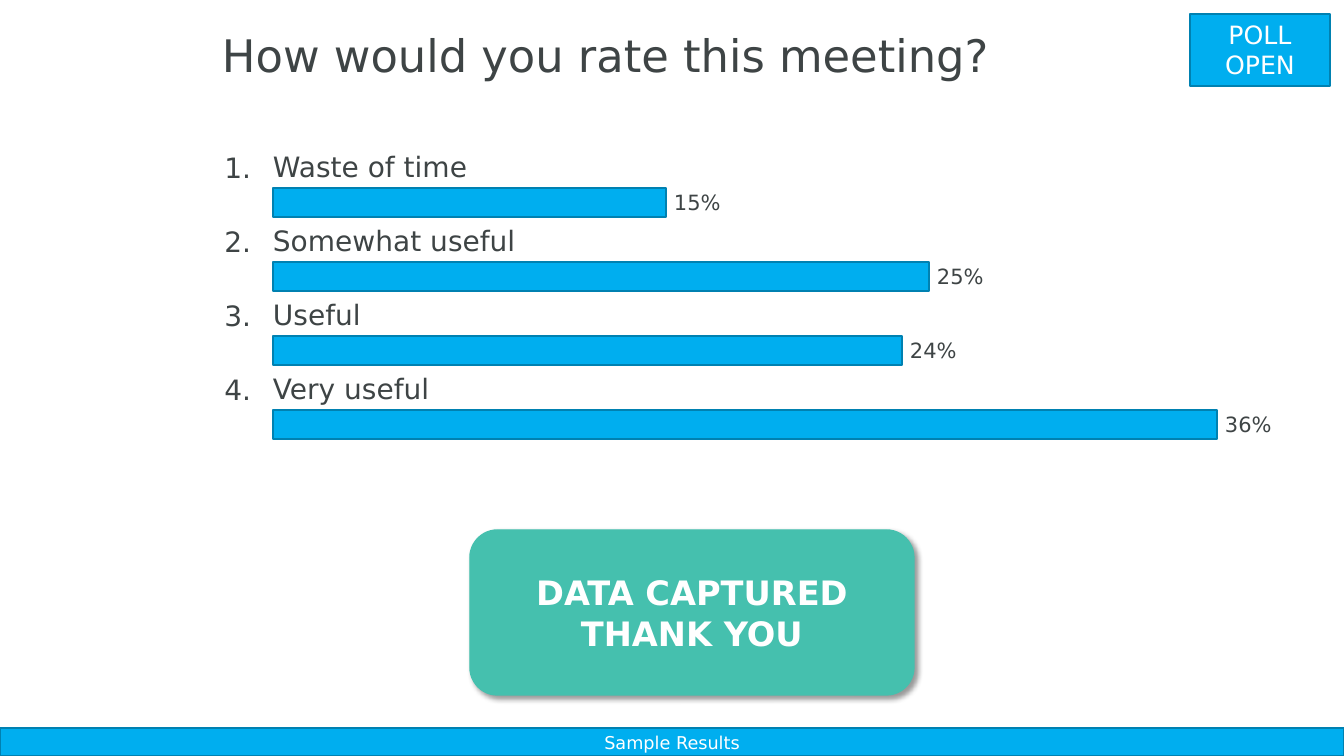
"""Build a poll results slide with four rated answers and a thank-you badge."""
from lxml import etree
from pptx import Presentation, util as u
from pptx.dml.color import RGBColor
from pptx.enum import shapes, text
from pptx.oxml import ns

PX = 914400 / 100.8
FONT = "DejaVu Sans"
COLORS = {"blue": "00AEEF", "edge": "0081B1", "teal": "45C0AE",
          "ink": "3E4445", "white": "FFFFFF"}
LEFT, CENTER, RIGHT = text.PP_ALIGN.LEFT, text.PP_ALIGN.CENTER, text.PP_ALIGN.RIGHT
TOP, MIDDLE = text.MSO_ANCHOR.TOP, text.MSO_ANCHOR.MIDDLE

deck = Presentation()
deck.slide_width, deck.slide_height = round(1344 * PX), round(756 * PX)
page = deck.slides.add_slide(deck.slide_layouts[6])


def add_block(place, fill, edge, kind=shapes.MSO_SHAPE.RECTANGLE):
    block = page.shapes.add_shape(kind, *(round(side * PX) for side in place))
    block.shadow.inherit = False
    block.fill.solid()
    block.fill.fore_color.rgb = RGBColor.from_string(COLORS[fill])
    block.line.color.rgb = RGBColor.from_string(COLORS[edge])
    block.line.width = u.Pt(1)
    return block


def write(box, words, size, color="ink", align=LEFT, anchor=TOP, insets=(10, 5, 10, 5)):
    frame = box.text_frame
    frame.word_wrap = True
    frame.vertical_anchor = anchor
    (frame.margin_left, frame.margin_top,
     frame.margin_right, frame.margin_bottom) = (round(inset * PX) for inset in insets)
    para = frame.paragraphs[0]
    para.text = words
    para.alignment = align
    para.font.name = FONT
    para.font.size = u.Pt(size)
    para.font.color.rgb = RGBColor.from_string(COLORS[color])
    return para


footer = add_block((0, 728, 1344, 28), "blue", "edge")
write(footer, "Sample Results", 12.6, "white", CENTER, MIDDLE)

title = page.shapes.add_textbox(*(round(side * PX) for side in (212, 29, 960, 107)))
write(title, "How would you rate this meeting?", 32).line_spacing = 0.9

status = add_block((1190, 14, 140, 72), "blue", "edge")
write(status, "POLL OPEN", 18, "white", CENTER)

badge = add_block((470, 530, 444, 165), "teal", "teal", shapes.MSO_SHAPE.ROUNDED_RECTANGLE)
write(badge, "DATA CAPTURED\vTHANK YOU", 24, "white", CENTER, MIDDLE).font.bold = True
effects = badge._element.spPr.find(ns.qn("a:effectLst"))
shadow = etree.SubElement(effects, ns.qn("a:outerShdw"), blurRad="50800", dist="38100",
                          dir="2700000", algn="tl", rotWithShape="0")
shade = etree.SubElement(shadow, ns.qn("a:srgbClr"), val="000000")
etree.SubElement(shade, ns.qn("a:alpha"), val="40000")

ANSWERS = [("Waste of time", 15), ("Somewhat useful", 25), ("Useful", 24), ("Very useful", 36)]
BAR_LEFT, ROW_TOP, ROW_STEP = 273, 144, 74
for index, (answer, percent) in enumerate(ANSWERS):
    top = ROW_TOP + index * ROW_STEP
    length = round(percent * 26.22)
    labels = [
        (f"{index + 1}.", (212, top, 61, 39), 20, RIGHT, (10, 6, 22, 0)),
        (answer, (BAR_LEFT, top, 1016, 42), 20, LEFT, (0, 6, 0, 3)),
        (f"{percent}%", (BAR_LEFT + length, top + 46, 58, 25), 15, LEFT, (8, 0, 0, 0)),
    ]
    for words, place, size, align, insets in labels:
        label = page.shapes.add_textbox(*(round(side * PX) for side in place))
        write(label, words, size, align=align, insets=insets)
    add_block((BAR_LEFT, top + 44, length, 29), "blue", "edge")

deck.save("out.pptx")
